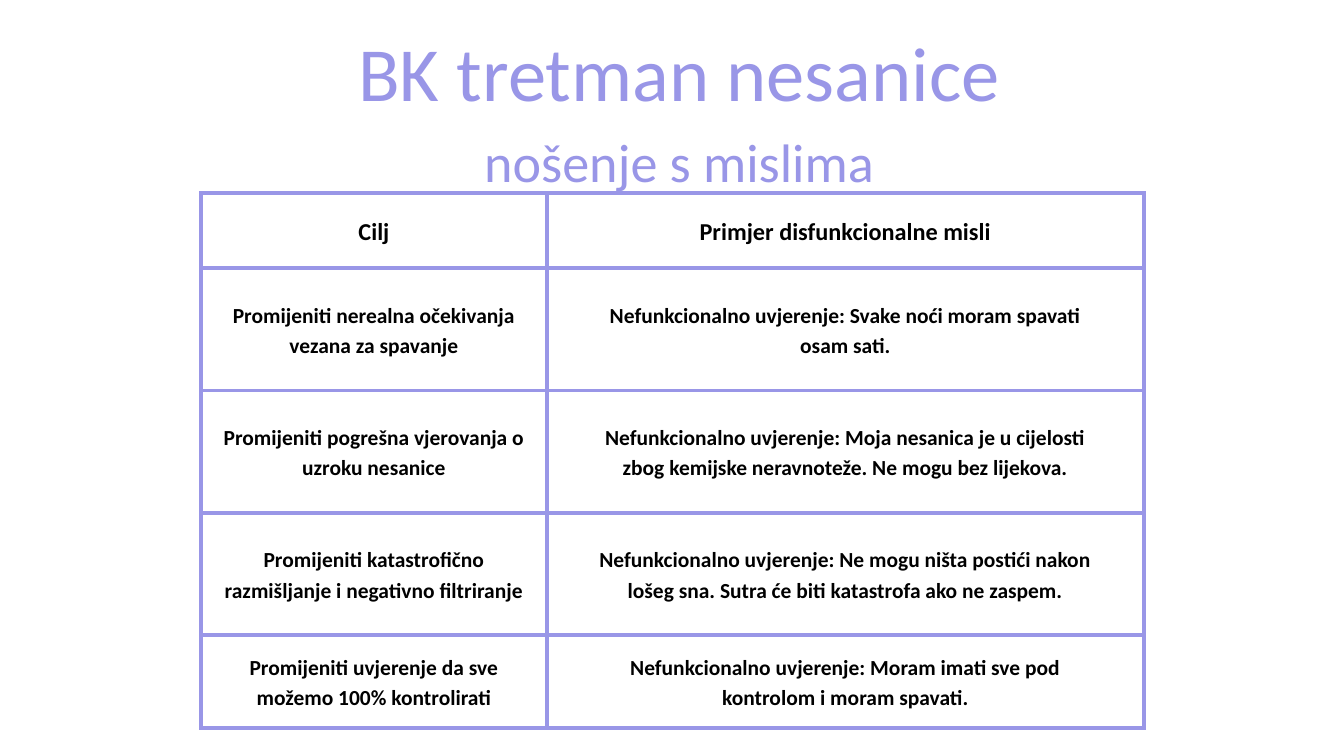
"""Builds the slide on coping with thoughts in insomnia treatment."""
from dataclasses import dataclass

from lxml import etree
from pptx import Presentation
from pptx.dml.color import RGBColor
from pptx.enum import text as t
from pptx.oxml import ns
from pptx.util import Inches, Pt


@dataclass
class Theme:
    font: str = "Calibri"
    lilac: str = "9996E7"
    ink: str = "000000"
    paper: str = "FFFFFF"
    title: int = 82
    sub: int = 58
    head: int = 26
    body: int = 23
    edge: float = 4.5
    lead: float = 1.4


theme = Theme()


def style(para, size, color, bold=False):
    para.alignment = t.PP_ALIGN.CENTER
    para.line_spacing = Pt(round(size * theme.lead, 1))
    for run in para.runs:
        run.font.name = theme.font
        run.font.size = Pt(size)
        run.font.bold = bold
        run.font.color.rgb = RGBColor.from_string(color)


def border(cell):
    props = cell._tc.get_or_add_tcPr()
    for side in ("lnL", "lnR", "lnT", "lnB"):
        line = etree.SubElement(props, ns.qn(f"a:{side}"), w=str(Pt(theme.edge)))
        fill = etree.SubElement(line, ns.qn("a:solidFill"))
        etree.SubElement(fill, ns.qn("a:srgbClr"), val=theme.lilac)


deck = Presentation()
deck.slide_width, deck.slide_height = Inches(20), Inches(11.25)
slide = deck.slides.add_slide(deck.slide_layouts[5])
slide.background.fill.solid()
slide.background.fill.fore_color.rgb = RGBColor.from_string(theme.paper)

title = slide.shapes.title
title.left, title.top = Inches(0.45), Inches(0.15)
title.width, title.height = Inches(19.31), Inches(2.69)
frame = title.text_frame
frame.text = "BK tretman nesanice\nnošenje s mislima"
frame.word_wrap = True
frame.auto_size = t.MSO_AUTO_SIZE.NONE
frame.vertical_anchor = t.MSO_ANCHOR.TOP
frame.margin_left = frame.margin_right = frame.margin_top = frame.margin_bottom = 0
for para, size in zip(frame.paragraphs, (theme.title, theme.sub)):
    style(para, size, theme.lilac)

rows = [
    ("Cilj", "Primjer disfunkcionalne misli"),
    ("Promijeniti nerealna očekivanja\nvezana za spavanje",
     "Nefunkcionalno uvjerenje: Svake noći moram spavati\nosam sati."),
    ("Promijeniti pogrešna vjerovanja o\nuzroku nesanice",
     "Nefunkcionalno uvjerenje: Moja nesanica je u cijelosti\n"
     "zbog kemijske neravnoteže. Ne mogu bez lijekova."),
    ("Promijeniti katastrofično\nrazmišljanje i negativno filtriranje",
     "Nefunkcionalno uvjerenje: Ne mogu ništa postići nakon\n"
     "lošeg sna. Sutra će biti katastrofa ako ne zaspem."),
    ("Promijeniti uvjerenje da sve\nmožemo 100% kontrolirati",
     "Nefunkcionalno uvjerenje: Moram imati sve pod\nkontrolom i moram spavati."),
]
wide = (5.15, 8.88)
high = (1.12, 1.82, 1.82, 1.82, 1.38)

table = slide.shapes.add_table(
    len(rows), len(wide), Inches(2.99), Inches(2.87),
    Inches(sum(wide)), Inches(sum(high))).table
for col, width in zip(table.columns, wide):
    col.width = Inches(width)
for r, (words, height) in enumerate(zip(rows, high)):
    table.rows[r].height = Inches(height)
    for c, word in enumerate(words):
        cell = table.cell(r, c)
        border(cell)
        cell.fill.background()
        cell.vertical_anchor = t.MSO_ANCHOR.MIDDLE
        cell.margin_left = cell.margin_right = Inches(0.21)
        cell.margin_top = cell.margin_bottom = Inches(0.21)
        cell.text_frame.text = word
        for para in cell.text_frame.paragraphs:
            style(para, theme.body if r else theme.head, theme.ink, True)

deck.save("out.pptx")
